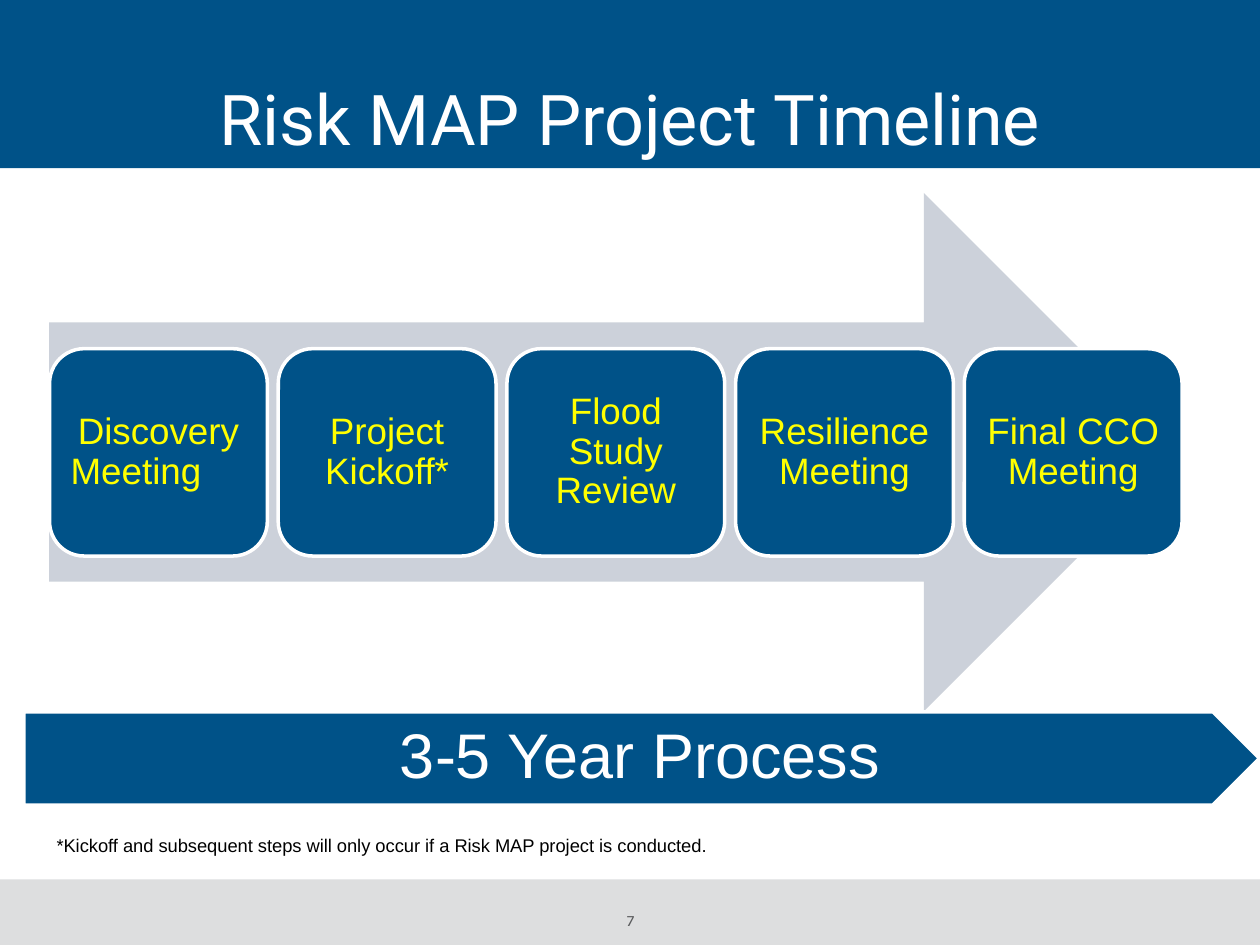
from dataclasses import dataclass

from pptx import Presentation
from pptx.dml.color import RGBColor
from pptx.enum.shapes import MSO_SHAPE
from pptx.enum.text import MSO_ANCHOR, PP_ALIGN
from pptx.util import Cm, Pt


@dataclass(frozen=True)
class Theme:
    blue: str = "005288"
    arrow: str = "CCD1DA"
    footer: str = "DDDEDF"
    white: str = "FFFFFF"
    yellow: str = "FFFF00"
    grey: str = "5B5C5E"
    black: str = "000000"
    body_font: str = "Arial"
    title_font: str = "Roboto"
    number_font: str = "Karla"
    title_size: float = 40
    banner_size: float = 36
    step_size: float = 21
    note_size: float = 10.5
    number_size: float = 9
    outline: float = 2


THEME = Theme()
STEPS = ["Discovery Meeting\t", "Project Kickoff*", "Flood Study Review",
         "Resilience Meeting", "Final CCO Meeting"]


def set_all(obj, formats):
    for name, value in formats.items():
        setattr(obj, name, value)


def add_block(slide, kind, box, fill, outlined=False):
    """Add a filled preset shape; box is left, top, width, height in cm."""
    s = slide.shapes.add_shape(kind, *map(Cm, box))
    s.shadow.inherit = False
    s.fill.solid()
    s.fill.fore_color.rgb = RGBColor.from_string(fill)
    if outlined:
        s.line.color.rgb = RGBColor.from_string(THEME.white)
        s.line.width = Pt(THEME.outline)
    else:
        s.line.fill.background()
    return s


def add_label(slide, box):
    return slide.shapes.add_textbox(*map(Cm, box))


def write(s, text, size, color, font=THEME.body_font, align=PP_ALIGN.CENTER,
          anchor=MSO_ANCHOR.MIDDLE, spacing=0.9, insets=(0.25, 0.13, 0.25, 0.13)):
    """Write one paragraph; insets are left, top, right, bottom in cm."""
    tf = s.text_frame
    left, top, right, bottom = map(Cm, insets)
    set_all(tf, {"word_wrap": True, "vertical_anchor": anchor,
                 "margin_left": left, "margin_top": top,
                 "margin_right": right, "margin_bottom": bottom})
    p = tf.paragraphs[0]
    set_all(p, {"alignment": align, "line_spacing": spacing})
    r = p.add_run()
    r.text = text
    set_all(r.font, {"name": font, "size": Pt(size)})
    r.font.color.rgb = RGBColor.from_string(color)


def add_steps(slide, left, top, width, height, pitch):
    for i, step in enumerate(STEPS):
        s = add_block(slide, MSO_SHAPE.ROUNDED_RECTANGLE,
                      (left + i * pitch, top, width, height), THEME.blue, True)
        write(s, step, THEME.step_size, THEME.yellow, insets=(0.22,) * 4)


def main():
    prs = Presentation()
    set_all(prs, {"slide_width": Cm(25.4), "slide_height": Cm(19.05)})
    slide = prs.slides.add_slide(prs.slide_layouts[6])

    # Footer band and page number
    add_block(slide, MSO_SHAPE.RECTANGLE, (0, 17.73, 25.4, 1.32), THEME.footer)
    write(add_label(slide, (10.59, 18.36, 4.24, 0.38)), "7", THEME.number_size,
          THEME.grey, THEME.number_font, spacing=1.0, insets=(0,) * 4)

    # Title band
    add_block(slide, MSO_SHAPE.RECTANGLE, (0, 0, 25.4, 3.39), THEME.blue)
    write(add_label(slide, (1.27, 0.13, 22.86, 3.2)), "Risk MAP Project Timeline",
          THEME.title_size, THEME.white, THEME.title_font,
          anchor=MSO_ANCHOR.BOTTOM, spacing=0.8)

    # Timeline arrow with its steps
    add_block(slide, MSO_SHAPE.RIGHT_ARROW, (0.99, 3.89, 22.86, 10.45), THEME.arrow)
    add_steps(slide, left=1, top=7.03, width=4.39, height=4.18, pitch=4.61)

    # Duration banner
    banner = add_block(slide, MSO_SHAPE.PENTAGON, (0.48, 14.35, 24.91, 1.88),
                       THEME.blue, True)
    write(banner, "3-5 Year Process", THEME.banner_size, THEME.white,
          insets=(0.53, 0.25, 0.13, 0.25))

    # Footnote
    write(add_label(slide, (0.89, 16.69, 20.98, 0.71)),
          "*Kickoff and subsequent steps will only occur if a Risk MAP project is conducted.",
          THEME.note_size, THEME.black, align=PP_ALIGN.LEFT,
          anchor=MSO_ANCHOR.TOP, spacing=1.0)

    prs.save("out.pptx")


if __name__ == "__main__":
    main()
